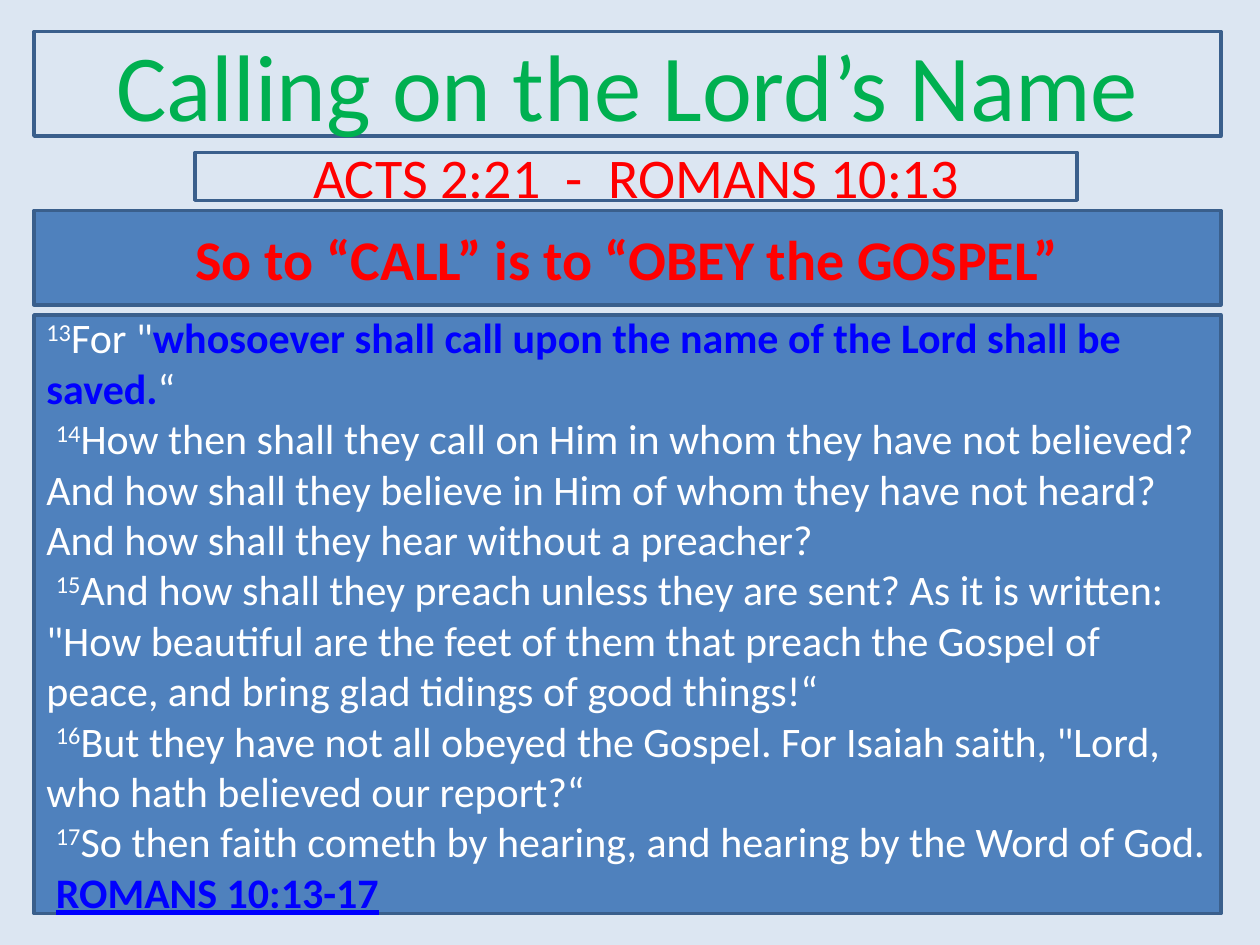
import pptx
import pptx.util
import pptx.dml.color
import pptx.enum.shapes
import pptx.enum.text
from pptx.util import Pt

ALIGN = pptx.enum.text.PP_ALIGN
LEFT, WIDTH = 19.44, 678.24
GREEN, RED, BLUE, WHITE = "00B050", "FF0000", "0000FF", "FFFFFF"
PANEL, OUTLINE, BACKGROUND = "4F81BD", "3A5F8C", "DCE6F2"
SPACE_INDENT = 5.4

VERSES = [
    ("13", [("For \"", False),
            ("whosoever shall call upon the name of the Lord shall be saved.", True),
            ("“", False)]),
    ("14", [("How then shall they call on Him in whom they have not believed? "
             "And how shall they believe in Him of whom they have not heard? "
             "And how shall they hear without a preacher?", False)]),
    ("15", [("And how shall they preach unless they are sent? As it is written: "
             "\"How beautiful are the feet of them that preach the Gospel of peace, "
             "and bring glad tidings of good things!“", False)]),
    ("16", [("But they have not all obeyed the Gospel. For Isaiah saith, "
             "\"Lord, who hath believed our report?“", False)]),
    ("17", [("So then faith cometh by hearing, and hearing by the Word of God.", False)]),
]


def paint(color_format, value):
    color_format.rgb = pptx.dml.color.RGBColor.from_string(value)


def style_paragraph(para, size, color, align, bold=False):
    para.alignment = align
    para.font.name = "Calibri"
    para.font.size = Pt(size)
    para.font.bold = bold
    paint(para.font.color, color)


def frame(shape, box, fill=None):
    """Place a shape in its box with the outline shared by all regions."""
    shape.left, shape.top, shape.width, shape.height = (Pt(length) for length in box)
    if fill:
        shape.fill.solid()
        paint(shape.fill.fore_color, fill)
    else:
        shape.fill.background()
    paint(shape.line.color, OUTLINE)
    shape.line.width = Pt(2)
    text = shape.text_frame
    text.word_wrap = True
    text.auto_size = pptx.enum.text.MSO_AUTO_SIZE.NONE
    text.vertical_anchor = pptx.enum.text.MSO_ANCHOR.MIDDLE
    return text


def add_panel(page, box, fill=None):
    shape = page.shapes.add_shape(
        pptx.enum.shapes.MSO_SHAPE.RECTANGLE, *(Pt(length) for length in box))
    shape.shadow.inherit = False
    return frame(shape, box, fill)


def write_heading(text, wording, size, color, bold=False):
    text.text = wording
    style_paragraph(text.paragraphs[0], size, color, ALIGN.CENTER, bold)


def add_span(para, wording, emphasis=False):
    span = para.add_run()
    span.text = wording
    if emphasis:
        span.font.bold = True
        paint(span.font.color, BLUE)
    return span


def add_passage(page, box):
    text = add_panel(page, box, PANEL)
    for index, (number, parts) in enumerate(VERSES):
        para = text.paragraphs[0] if index == 0 else text.add_paragraph()
        style_paragraph(para, 24, WHITE, ALIGN.LEFT)
        if index:
            para._p.get_or_add_pPr().set("indent", str(Pt(SPACE_INDENT)))
        superscript = add_span(para, number)
        superscript._r.get_or_add_rPr().set("baseline", "30000")
        for wording, emphasis in parts:
            add_span(para, wording, emphasis)
    reference = text.add_paragraph()
    style_paragraph(reference, 24, WHITE, ALIGN.LEFT)
    reference._p.get_or_add_pPr().set("indent", str(Pt(SPACE_INDENT)))
    add_span(reference, "ROMANS 10:13-17", True).font.underline = True


def main():
    deck = pptx.Presentation()
    deck.slide_width, deck.slide_height = Pt(720), Pt(540)
    page = deck.slides.add_slide(deck.slide_layouts[5])
    page.background.fill.solid()
    paint(page.background.fill.fore_color, BACKGROUND)

    title = frame(page.shapes.title, (LEFT, 18, WIDTH, 59.76))
    write_heading(title, "Calling on the Lord’s Name", 54, GREEN)
    verses = add_panel(page, (111.6, 87.12, 504, 27.36))
    write_heading(verses, "ACTS 2:21  -  ROMANS 10:13", 32, RED)
    add_passage(page, (LEFT, 180, WIDTH, 342))
    banner = add_panel(page, (LEFT, 120.24, WIDTH, 54), PANEL)
    write_heading(banner, "So to “CALL” is to “OBEY the GOSPEL”", 32, RED, bold=True)
    deck.save("out.pptx")


if __name__ == "__main__":
    main()
